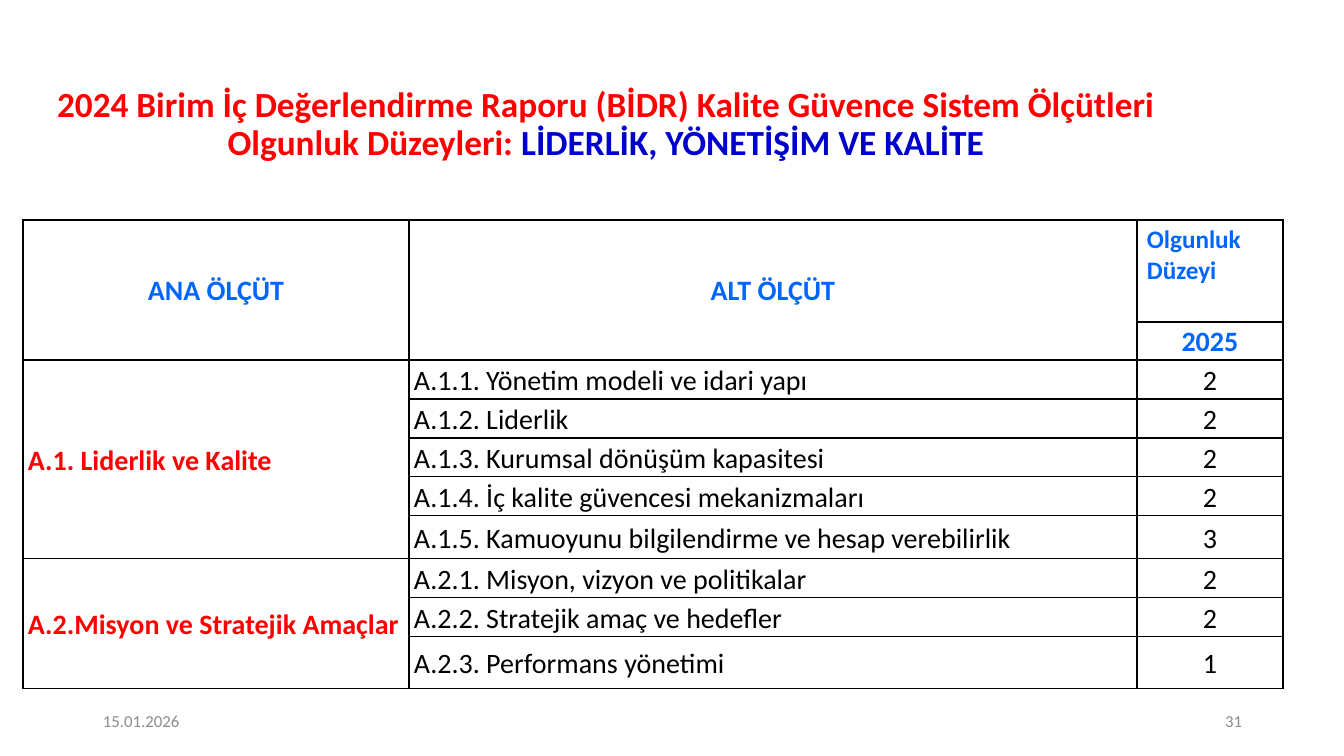
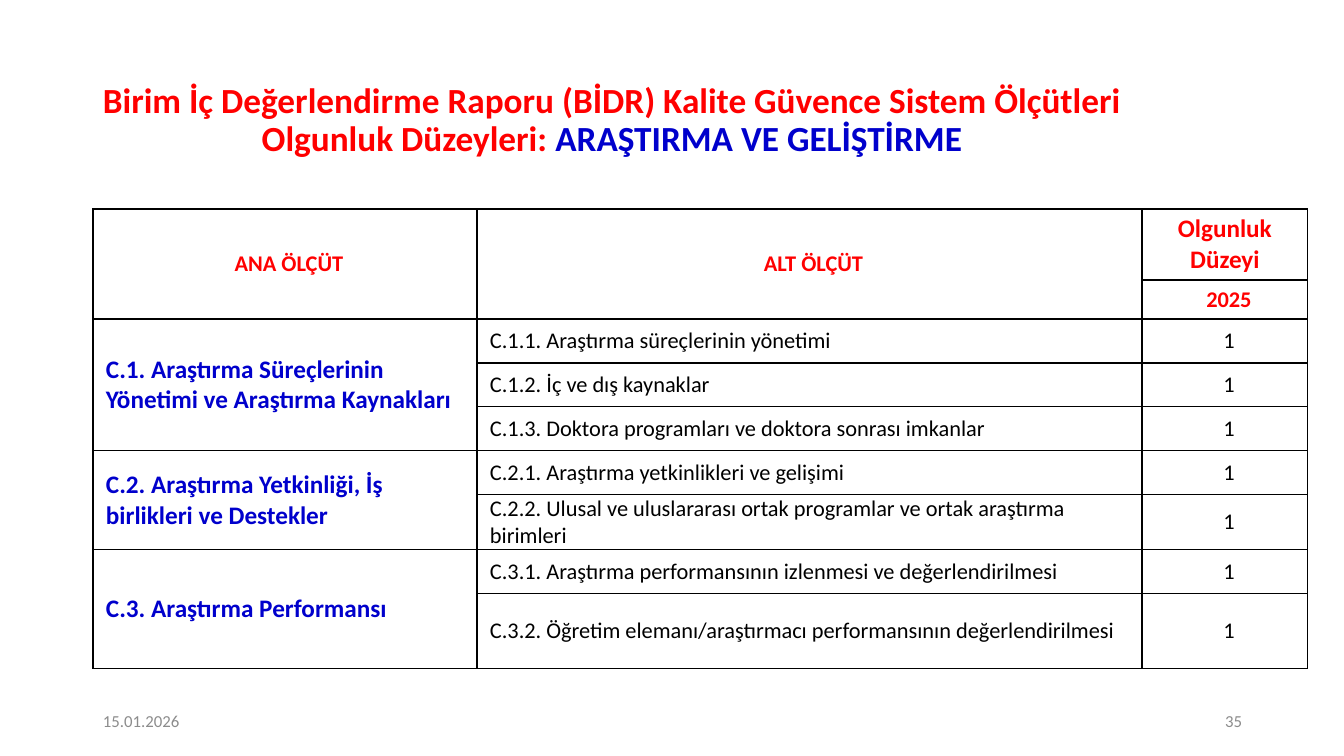
from dataclasses import dataclass

from lxml import etree
from pptx import Presentation
from pptx.dml.color import RGBColor
from pptx.enum.text import MSO_ANCHOR, MSO_AUTO_SIZE, PP_ALIGN
from pptx.oxml.ns import qn
from pptx.util import Emu, Pt

LEFT, CENTER, RIGHT, JUSTIFY = PP_ALIGN.LEFT, PP_ALIGN.CENTER, PP_ALIGN.RIGHT, PP_ALIGN.JUSTIFY
TOP, MIDDLE = MSO_ANCHOR.TOP, MSO_ANCHOR.MIDDLE
NO_AUTOFIT = MSO_AUTO_SIZE.NONE

PX_PER_INCH = 100.8
RED, NAVY, BLUE, BLACK, GRAY = "FF0000", "0000CC", "0066FF", "000000", "8C8C8C"


def px(n):
    return Emu(round(n * 914400 / PX_PER_INCH))


def rgb(value):
    return RGBColor.from_string(value)


@dataclass
class TableLook:
    head_color: str
    head_size: int
    corner_align: PP_ALIGN
    group_color: str
    group_size: int
    body_size: int
    body_align: PP_ALIGN
    inset: int
    spacing: float


class Deck:
    font = "Calibri"
    title_size = 25.2
    footer_size = 12
    date = "15.01.2026"

    def __init__(self):
        self.prs = Presentation()
        self.prs.slide_width, self.prs.slide_height = px(1344), px(756)
        self.s = None

    def slide(self, number):
        self.s = self.prs.slides.add_slide(self.prs.slide_layouts[5])
        self.footer(93, self.date, LEFT)
        self.footer(950, number, RIGHT)

    def style(self, r, size, color, bold=False):
        r.font.name, r.font.size, r.font.bold = self.font, Pt(size), bold
        r.font.color.rgb = rgb(color)

    def title(self, x, y, w, h, lead, topic):
        sp = self.s.shapes.title
        sp.left, sp.top, sp.width, sp.height = px(x), px(y), px(w), px(h)
        tf = sp.text_frame
        tf.word_wrap, tf.auto_size, tf.vertical_anchor = True, NO_AUTOFIT, MIDDLE
        p = tf.paragraphs[0]
        p.alignment, p.line_spacing = CENTER, 0.9
        for text, color in ((lead, RED), (topic, NAVY)):
            r = p.add_run()
            r.text = text
            self.style(r, self.title_size, color, True)

    def footer(self, x, text, align):
        tf = self.s.shapes.add_textbox(px(x), px(701), px(302), px(40)).text_frame
        tf.word_wrap, tf.vertical_anchor = True, MIDDLE
        tf.text = text
        p = tf.paragraphs[0]
        p.alignment = align
        self.style(p.runs[0], self.footer_size, GRAY)

    def frame(self, cell, inset):
        cell.fill.background()
        cell.margin_left, cell.margin_right = px(inset), px(5)
        cell.margin_top = cell.margin_bottom = 0
        tcPr = cell._tc.get_or_add_tcPr()
        for i, side in enumerate(("a:lnL", "a:lnR", "a:lnT", "a:lnB")):
            ln = etree.Element(qn(side), w=str(Pt(1)))
            fill = etree.SubElement(ln, qn("a:solidFill"))
            etree.SubElement(fill, qn("a:srgbClr"), val=BLACK)
            tcPr.insert(i, ln)

    def cell(self, cell, text, size, color, bold, align, spacing):
        cell.text = text
        cell.vertical_anchor = MIDDLE
        p = cell.text_frame.paragraphs[0]
        p.alignment, p.line_spacing = align, spacing
        self.style(p.runs[0], size, color, bold)

    def table(self, x, y, cols, rows, groups, look):
        tbl = self.s.shapes.add_table(
            len(rows), len(cols), px(x), px(y), px(sum(cols)), px(sum(rows))).table
        tbl.first_row = tbl.horz_banding = False
        for col, w in zip(tbl.columns, cols):
            col.width = px(w)
        for row, h in zip(tbl.rows, rows):
            row.height = px(h)
        for c in tbl.iter_cells():
            self.frame(c, look.inset)

        head = (look.head_size, look.head_color, True, CENTER, look.spacing)
        for col, text in enumerate(("ANA ÖLÇÜT", "ALT ÖLÇÜT")):
            tbl.cell(0, col).merge(tbl.cell(1, col))
            self.cell(tbl.cell(0, col), text, *head)
        corner = tbl.cell(0, 2)
        self.cell(corner, "Olgunluk Düzeyi", 18, look.head_color, True, look.corner_align, 1.0)
        corner.vertical_anchor = TOP
        corner.margin_left = corner.margin_right = px(10)
        corner.margin_top = corner.margin_bottom = px(5)
        self.cell(tbl.cell(1, 2), "2025", *head)

        row = 2
        for name, items in groups:
            tbl.cell(row, 0).merge(tbl.cell(row + len(items) - 1, 0))
            self.cell(tbl.cell(row, 0), name, look.group_size, look.group_color, True,
                      look.body_align, look.spacing)
            for text, level in items:
                body = (look.body_size, BLACK, False)
                self.cell(tbl.cell(row, 1), text, *body, look.body_align, look.spacing)
                self.cell(tbl.cell(row, 2), str(level), *body, CENTER, look.spacing)
                row += 1


LEADERSHIP = [
    ("A.1. Liderlik ve Kalite", [
        ("A.1.1. Yönetim modeli ve idari yapı", 2),
        ("A.1.2. Liderlik", 2),
        ("A.1.3. Kurumsal dönüşüm kapasitesi", 2),
        ("A.1.4. İç kalite güvencesi mekanizmaları", 2),
        ("A.1.5. Kamuoyunu bilgilendirme ve hesap verebilirlik", 3),
    ]),
    ("A.2.Misyon ve Stratejik Amaçlar", [
        ("A.2.1. Misyon, vizyon ve politikalar", 2),
        ("A.2.2. Stratejik amaç ve hedefler", 2),
        ("A.2.3. Performans yönetimi", 1),
    ]),
]

RESEARCH = [
    ("C.1. Araştırma Süreçlerinin Yönetimi ve Araştırma Kaynakları", [
        ("C.1.1. Araştırma süreçlerinin yönetimi", 1),
        ("C.1.2. İç ve dış kaynaklar", 1),
        ("C.1.3. Doktora programları ve doktora sonrası imkanlar", 1),
    ]),
    ("C.2. Araştırma Yetkinliği, İş birlikleri ve Destekler", [
        ("C.2.1. Araştırma yetkinlikleri ve gelişimi", 1),
        ("C.2.2. Ulusal ve uluslararası ortak programlar ve ortak araştırma birimleri", 1),
    ]),
    ("C.3. Araştırma Performansı", [
        ("C.3.1. Araştırma performansının izlenmesi ve değerlendirilmesi", 1),
        ("C.3.2. Öğretim elemanı/araştırmacı performansının değerlendirilmesi", 1),
    ]),
]


def main():
    report = "Birim İç Değerlendirme Raporu (BİDR) Kalite Güvence Sistem Ölçütleri Olgunluk Düzeyleri: "
    deck = Deck()

    deck.slide("31")
    deck.title(36, 86, 1140, 78, "2024 " + report, "LİDERLİK, YÖNETİŞİM VE KALİTE")
    deck.table(23, 220, (386, 728, 146), (102, 38, 39, 39, 39, 39, 43, 39, 39, 52), LEADERSHIP,
               TableLook(BLUE, 20, LEFT, RED, 20, 20, JUSTIFY, 5, 1.07))

    deck.slide("35")
    deck.title(23, 81, 1178, 81, report, "ARAŞTIRMA VE GELİŞTİRME")
    deck.table(93, 209, (384, 665, 166), (71, 39, 44, 44, 44, 44, 55, 44, 75), RESEARCH,
               TableLook(RED, 16, CENTER, NAVY, 18, 16, LEFT, 13, 1.0))

    deck.prs.save("out.pptx")


if __name__ == "__main__":
    main()
